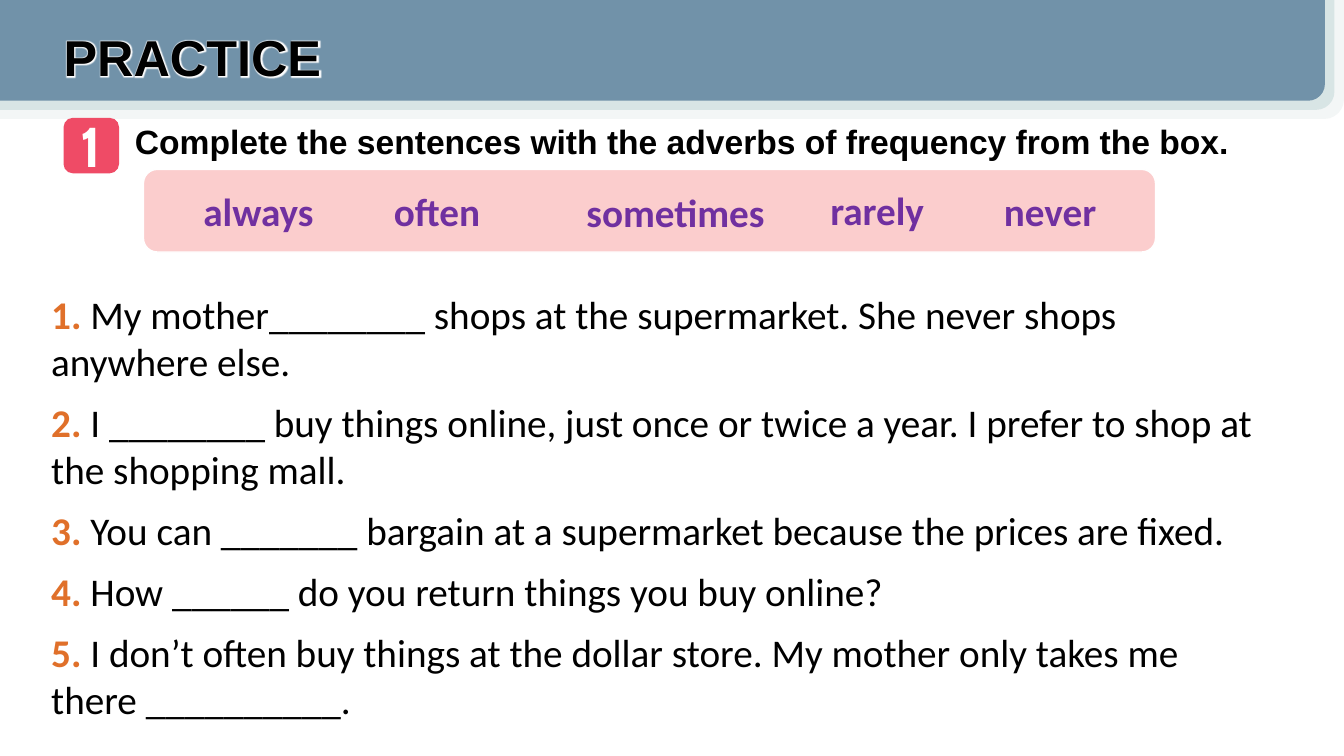
from dataclasses import dataclass

from lxml.etree import SubElement
from pptx import Presentation
from pptx.dml.color import RGBColor
from pptx.enum.shapes import MSO_SHAPE as Preset
from pptx.enum.text import MSO_ANCHOR as Anchor, MSO_AUTO_SIZE as AutoSize, PP_ALIGN as Align
from pptx.oxml.ns import qn
from pptx.util import Pt


@dataclass(frozen=True)
class Theme:
    bands: tuple = ("F3F6F6", "D8E5E5", "7192A9")
    ink: str = "000000"
    white: str = "FFFFFF"
    badge: str = "EF4B66"
    word_box: str = "FBCDCD"
    word: str = "7030A0"
    number: str = "E0702A"
    heading_font: str = "Arial"
    badge_font: str = "Cabin"
    body_font: str = "Calibri"
    title_size: int = 36
    badge_size: int = 40
    task_size: int = 24
    body_size: int = 28


class LessonSlide:
    def __init__(self, deck, theme):
        self.theme = theme
        self.slide = deck.slides.add_slide(deck.slide_layouts[5])

    def panel(self, preset, box, fill, outline=None, flipped=False):
        shape = self.slide.shapes.add_shape(preset, *map(Pt, box))
        shape.shadow.inherit = False
        shape.fill.solid()
        shape.fill.fore_color.rgb = RGBColor.from_string(fill)
        if outline:
            shape.line.color.rgb = RGBColor.from_string(outline)
            shape.line.width = Pt(1)
        else:
            shape.line.fill.background()
        if flipped:
            shape.element.spPr.find(qn("a:xfrm")).set("flipV", "1")

    def styled_run(self, paragraph, text, font, size, color, bold=True):
        run = paragraph.add_run()
        run.text = text
        style = {"name": font, "size": Pt(size), "bold": bold}
        for key, value in style.items():
            setattr(run.font, key, value)
        run.font.color.rgb = RGBColor.from_string(color)
        return run

    def frame(self, shape):
        layout = {"word_wrap": True, "auto_size": AutoSize.NONE, "vertical_anchor": Anchor.TOP}
        for key, value in layout.items():
            setattr(shape.text_frame, key, value)
        return shape.text_frame

    def label(self, box, text, font, size, color, align=Align.LEFT):
        frame = self.frame(self.slide.shapes.add_textbox(*map(Pt, box)))
        frame.paragraphs[0].alignment = align
        self.styled_run(frame.paragraphs[0], text, font, size, color)

    def title(self, box, text):
        heading = self.slide.shapes.title
        for key, value in zip(("left", "top", "width", "height"), box):
            setattr(heading, key, Pt(value))
        paragraph = self.frame(heading).paragraphs[0]
        paragraph.alignment = Align.LEFT
        paragraph.line_spacing = 1.0
        run = self.styled_run(paragraph, text, self.theme.heading_font,
                              self.theme.title_size, self.theme.ink)
        # White glow around the letters, placed right after the fill
        properties = run._r.get_or_add_rPr()
        effects = SubElement(properties, qn("a:effectLst"))
        glow = SubElement(effects, qn("a:glow"), rad=str(Pt(3)))
        SubElement(glow, qn("a:srgbClr"), val=self.theme.white)
        properties.insert(1, effects)
        # Bring the heading in front of the bands
        heading.element.getparent().append(heading.element)

    def numbered(self, box, sentences):
        theme = self.theme
        frame = self.frame(self.slide.shapes.add_textbox(*map(Pt, box)))
        for number, sentence in enumerate(sentences, 1):
            paragraph = frame.paragraphs[0] if number == 1 else frame.add_paragraph()
            paragraph.space_before = Pt(10)
            self.styled_run(paragraph, f"{number}.", theme.body_font, theme.body_size,
                            theme.number)
            self.styled_run(paragraph, f" {sentence}", theme.body_font, theme.body_size,
                            theme.ink, bold=False)


WORDS = [  # word, left, top, width
    ("always", 138.2, 130.3, 98),
    ("often", 274.3, 130.3, 81),
    ("sometimes", 411.8, 131, 143),
    ("rarely", 586, 129.6, 83),
    ("never", 710, 130.3, 84),
]
SENTENCES = [
    "My mother________ shops at the supermarket. She never shops anywhere else.",
    "I ________ buy things online, just once or twice a year. I prefer to shop at the shopping mall.",
    "You can _______ bargain at a supermarket because the prices are fixed.",
    "How ______ do you return things you buy online?",
    "I don’t often buy things at the dollar store. My mother only takes me there __________.",
]


def main():
    deck = Presentation()
    deck.slide_width, deck.slide_height = Pt(960), Pt(540)
    theme = Theme()
    practice = LessonSlide(deck, theme)

    # Header bands, each one step smaller
    for step, color in enumerate(theme.bands):
        practice.panel(Preset.ROUND_1_RECTANGLE, (0, 0, 960 - 6.8 * step, 85 - 6.5 * step),
                       color, flipped=True)

    # Task line with its number badge
    practice.label((89.3, 82.8, 851.8, 36), "Complete the sentences with the adverbs of "
                   "frequency from the box.", theme.heading_font, theme.task_size, theme.ink)
    practice.panel(Preset.ROUNDED_RECTANGLE, (45.4, 84.2, 39.6, 39.6), theme.badge)
    practice.label((49.7, 76.3, 31, 55.4), "1", theme.badge_font, theme.badge_size,
                   theme.white, Align.CENTER)
    practice.title((38.2, 15.1, 325.4, 51.1), "PRACTICE")

    # Word box
    practice.panel(Preset.ROUNDED_RECTANGLE, (102.5, 121, 722.9, 59), theme.word_box, theme.white)
    for word, left, top, width in WORDS:
        practice.label((left, top, width, 41), word, theme.body_font, theme.body_size, theme.word)

    # Sentences to complete
    practice.numbered((29.5, 203.8, 871.9, 342.7), SENTENCES)
    deck.save("out.pptx")


if __name__ == "__main__":
    main()
